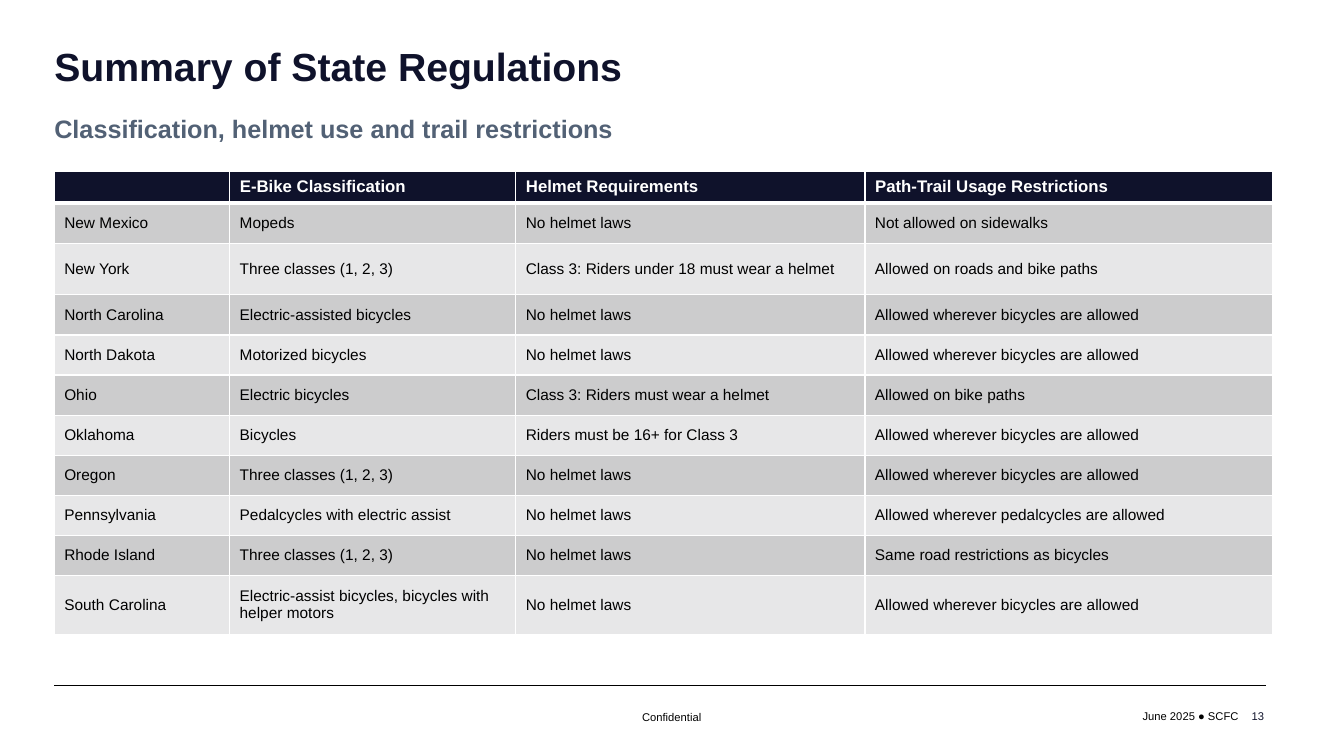
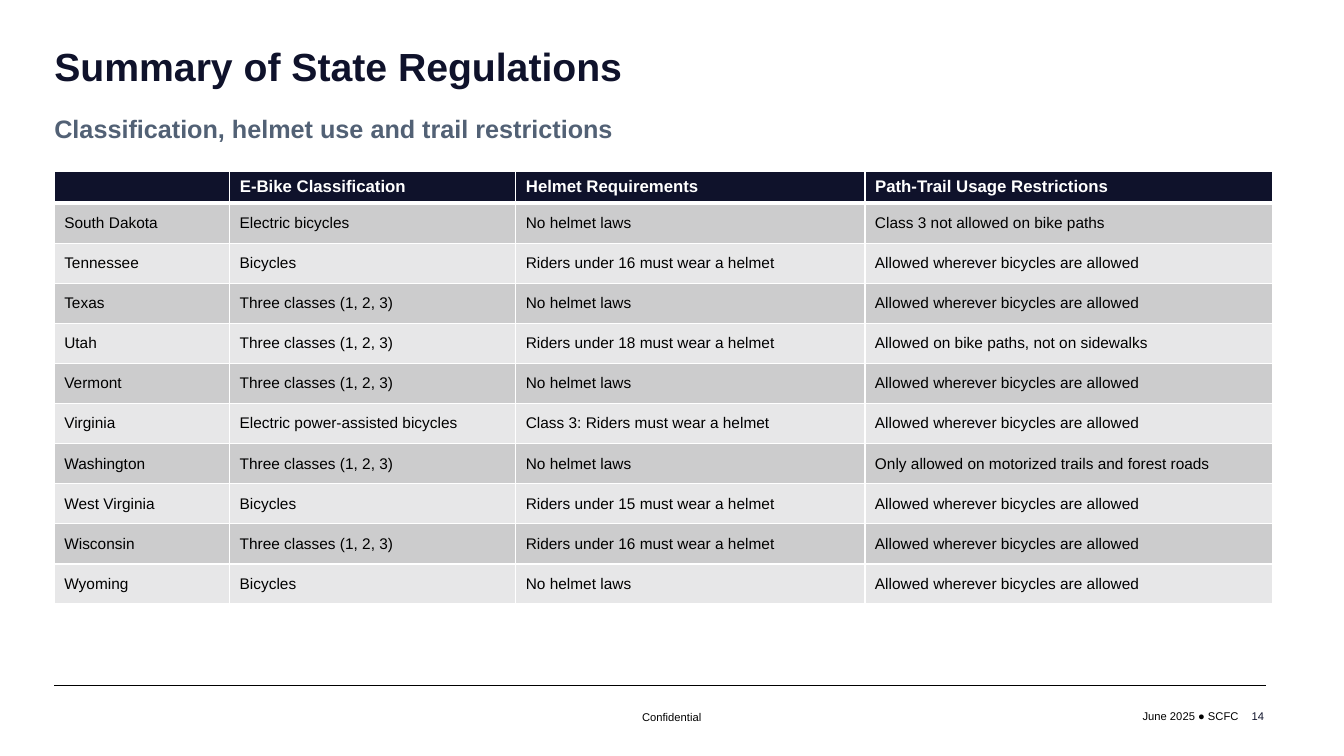
from lxml.etree import SubElement
from pptx import Presentation
from pptx.dml.color import RGBColor
from pptx.enum.shapes import MSO_CONNECTOR
from pptx.enum.text import MSO_ANCHOR, MSO_AUTO_SIZE, PP_ALIGN
from pptx.oxml.ns import qn
from pptx.util import Cm, Pt

NAVY = RGBColor(0x0F, 0x12, 0x2B)
SLATE = RGBColor(0x52, 0x61, 0x75)
BLACK = RGBColor(0x00, 0x00, 0x00)
WHITE = RGBColor(0xFF, 0xFF, 0xFF)
DARK_BAND = RGBColor(0xCC, 0xCC, 0xCD)
LIGHT_BAND = RGBColor(0xE7, 0xE7, 0xE8)

TITLE_FONT = {"name": "Arial", "size": Pt(28), "bold": True}
SUBTITLE_FONT = {"name": "Arial", "size": Pt(18), "bold": True}
HEADER_FONT = {"name": "Arial", "size": Pt(12), "bold": True}
BODY_FONT = {"name": "Arial", "size": Pt(11), "bold": False}
FOOTER_FONT = {"name": "Arial", "size": Pt(8), "bold": False}

TITLE_FRAME = {
    "margin_left": 0, "margin_right": 0, "margin_top": 0, "margin_bottom": 0,
    "vertical_anchor": MSO_ANCHOR.TOP, "word_wrap": True,
    "auto_size": MSO_AUTO_SIZE.NONE,
}
SUBTITLE_FRAME = {
    "margin_left": 0, "margin_right": 0,
    "vertical_anchor": MSO_ANCHOR.MIDDLE, "word_wrap": True,
}
FOOTER_FRAME = {"word_wrap": False, "auto_size": MSO_AUTO_SIZE.SHAPE_TO_FIT_TEXT}
NUMBER_FRAME = {"vertical_anchor": MSO_ANCHOR.MIDDLE, "word_wrap": True}
BODY_CELL = {
    "margin_left": Cm(0.25), "margin_right": Cm(0.25),
    "margin_top": Cm(0.25), "margin_bottom": Cm(0.25),
    "vertical_anchor": MSO_ANCHOR.MIDDLE,
}

LEFT = Cm(1.37)
COLUMN_WIDTHS = [4.42, 7.21, 8.8, 10.28]
HEADER_HEIGHT = 0.79
ROW_HEIGHT = 1.01
TALL_ROWS = {"New York": 1.3, "South Carolina": 1.48}

HEADINGS = ("", "E-Bike Classification", "Helmet Requirements", "Path-Trail Usage Restrictions")
THREE = "Three classes (1, 2, 3)"
NO_LAWS = "No helmet laws"
UNDER_16 = "Riders under 16 must wear a helmet"
CLASS_3_HELMET = "Class 3: Riders must wear a helmet"
ALLOWED = "Allowed wherever bicycles are allowed"

REGULATIONS = {
    13: [
        ("New Mexico", "Mopeds", NO_LAWS, "Not allowed on sidewalks"),
        ("New York", THREE, "Class 3: Riders under 18 must wear a helmet",
         "Allowed on roads and bike paths"),
        ("North Carolina", "Electric-assisted bicycles", NO_LAWS, ALLOWED),
        ("North Dakota", "Motorized bicycles", NO_LAWS, ALLOWED),
        ("Ohio", "Electric bicycles", CLASS_3_HELMET, "Allowed on bike paths"),
        ("Oklahoma", "Bicycles", "Riders must be 16+ for Class 3", ALLOWED),
        ("Oregon", THREE, NO_LAWS, ALLOWED),
        ("Pennsylvania", "Pedalcycles with electric assist", NO_LAWS,
         "Allowed wherever pedalcycles are allowed"),
        ("Rhode Island", THREE, NO_LAWS, "Same road restrictions as bicycles"),
        ("South Carolina", "Electric-assist bicycles, bicycles with helper motors",
         NO_LAWS, ALLOWED),
    ],
    14: [
        ("South Dakota", "Electric bicycles", NO_LAWS, "Class 3 not allowed on bike paths"),
        ("Tennessee", "Bicycles", UNDER_16, ALLOWED),
        ("Texas", THREE, NO_LAWS, ALLOWED),
        ("Utah", THREE, "Riders under 18 must wear a helmet",
         "Allowed on bike paths, not on sidewalks"),
        ("Vermont", THREE, NO_LAWS, ALLOWED),
        ("Virginia", "Electric power-assisted bicycles", CLASS_3_HELMET, ALLOWED),
        ("Washington", THREE, NO_LAWS, "Only allowed on motorized trails and forest roads"),
        ("West Virginia", "Bicycles", "Riders under 15 must wear a helmet", ALLOWED),
        ("Wisconsin", THREE, UNDER_16, ALLOWED),
        ("Wyoming", "Bicycles", NO_LAWS, ALLOWED),
    ],
}


def write(frame, text, color, font_format, frame_format, align=PP_ALIGN.LEFT):
    for attribute, value in frame_format.items():
        setattr(frame, attribute, value)
    paragraph = frame.paragraphs[0]
    paragraph.alignment = align
    run = paragraph.add_run()
    run.text = text
    run.font.color.rgb = color
    for attribute, value in font_format.items():
        setattr(run.font, attribute, value)


def add_borders(cell, bottom_width):
    properties = cell._tc.get_or_add_tcPr()
    widths = {"a:lnL": Pt(1), "a:lnR": Pt(1), "a:lnT": Pt(1), "a:lnB": bottom_width}
    for side, width in widths.items():
        border = SubElement(properties, qn(side), w=str(width))
        fill = SubElement(border, qn("a:solidFill"))
        SubElement(fill, qn("a:srgbClr"), val=str(WHITE))


prs = Presentation()
prs.slide_width = Cm(33.87)
prs.slide_height = Cm(19.05)
title_only = prs.slide_layouts[5]

for page, states in REGULATIONS.items():
    slide = prs.slides.add_slide(title_only)
    shapes = slide.shapes

    title = shapes.title
    title.left, title.top, title.width, title.height = LEFT, Cm(1.07), Cm(30.53), Cm(1.6)
    write(title.text_frame, "Summary of State Regulations", NAVY, TITLE_FONT, TITLE_FRAME)

    subtitle = shapes.add_textbox(LEFT, Cm(2.72), Cm(15.54), Cm(1.02))
    write(subtitle.text_frame, "Classification, helmet use and trail restrictions",
          SLATE, SUBTITLE_FONT, SUBTITLE_FRAME)

    footer_rule = shapes.add_connector(
        MSO_CONNECTOR.STRAIGHT, LEFT, Cm(17.27), Cm(31.9), Cm(17.27))
    footer_rule.line.color.rgb = BLACK
    footer_rule.line.width = Pt(1)
    SubElement(footer_rule._element.spPr, qn("a:effectLst"))

    date = shapes.add_textbox(Cm(28.42), Cm(17.75), Cm(3.05), Cm(0.61))
    write(date.text_frame, "June 2025 ● SCFC", BLACK, FOOTER_FONT, FOOTER_FRAME, PP_ALIGN.RIGHT)
    notice = shapes.add_textbox(Cm(15.93), Cm(17.78), Cm(2.03), Cm(0.61))
    write(notice.text_frame, "Confidential", BLACK, FOOTER_FONT, FOOTER_FRAME)
    number = shapes.add_textbox(Cm(24.49), Cm(17.53), Cm(7.62), Cm(1.02))
    write(number.text_frame, str(page), NAVY, FOOTER_FONT, NUMBER_FRAME, PP_ALIGN.RIGHT)

    rows = [HEADINGS] + states
    heights = [HEADER_HEIGHT] + [TALL_ROWS.get(row[0], ROW_HEIGHT) for row in states]
    regulations = shapes.add_table(
        len(rows), len(HEADINGS), LEFT, Cm(4.33),
        Cm(sum(COLUMN_WIDTHS)), Cm(sum(heights))).table
    for column, width in zip(regulations.columns, COLUMN_WIDTHS):
        column.width = Cm(width)
    for row_index, (row, height) in enumerate(zip(rows, heights)):
        regulations.rows[row_index].height = Cm(height)
        is_header = row_index == 0
        band = NAVY if is_header else DARK_BAND if row_index % 2 else LIGHT_BAND
        for column_index, text in enumerate(row):
            cell = regulations.cell(row_index, column_index)
            add_borders(cell, Pt(3) if is_header else Pt(1))
            cell.fill.solid()
            cell.fill.fore_color.rgb = band
            if not is_header:
                for attribute, value in BODY_CELL.items():
                    setattr(cell, attribute, value)
            if text:
                write(cell.text_frame, text, WHITE if is_header else BLACK,
                      HEADER_FONT if is_header else BODY_FONT, {})
            else:
                SubElement(cell.text_frame.paragraphs[0]._p, qn("a:endParaRPr"), sz="1200")

prs.save("out.pptx")
